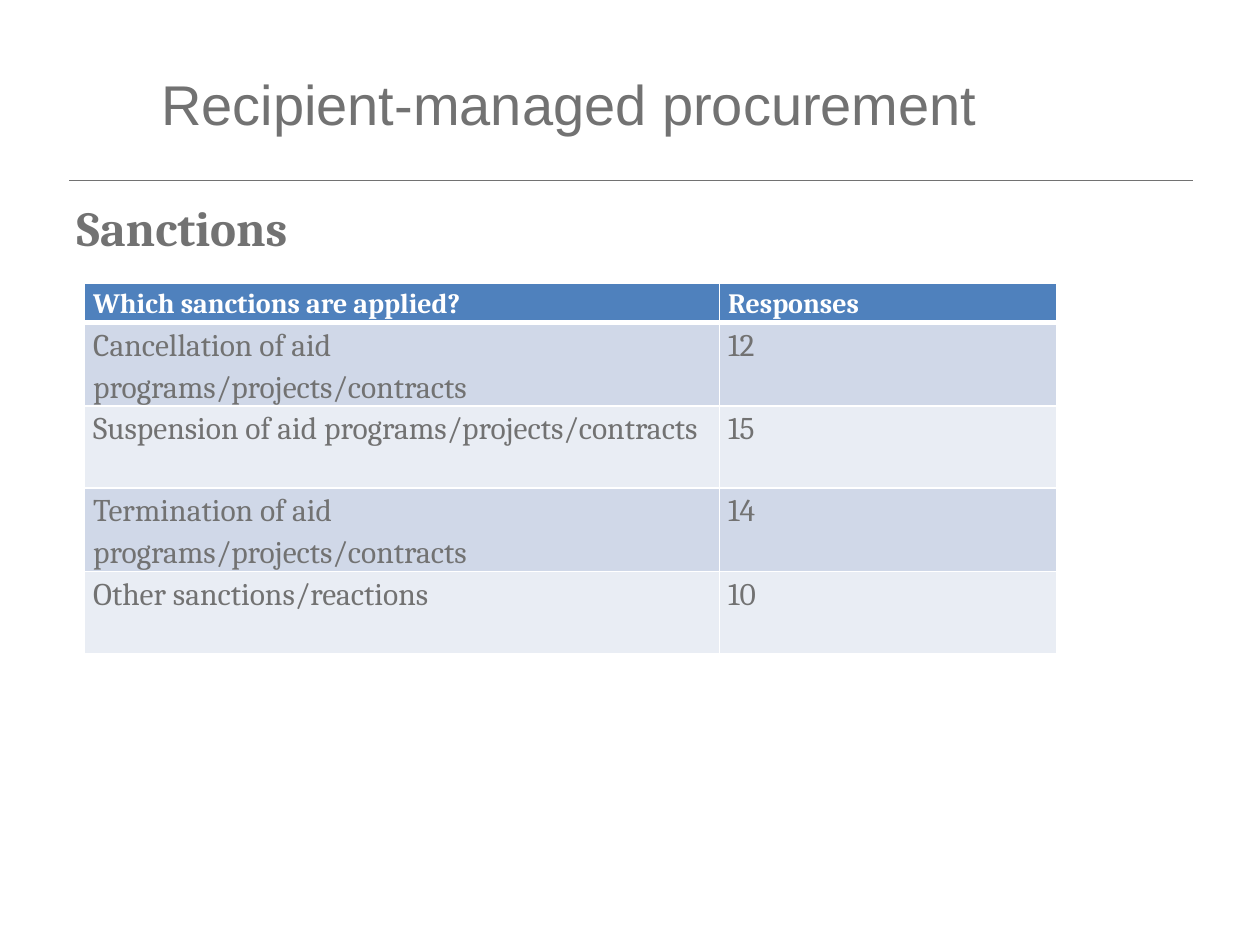
import pptx
import pptx.dml.color
import pptx.enum.shapes
import pptx.enum.text
import pptx.oxml
import pptx.oxml.ns
import pptx.util
from dataclasses import dataclass

Inches = pptx.util.Inches
Pt = pptx.util.Pt


@dataclass(frozen=True)
class Theme:
    grey: str = "727272"
    white: str = "FFFFFF"
    header_fill: str = "4F81BD"
    band_fills: tuple = ("D0D8E8", "E9EDF4")
    title_font: str = "Arial"
    body_font: str = "Cambria"
    title_size: int = 32
    subtitle_size: int = 28
    header_size: int = 16
    body_size: int = 18


def rgb(value):
    return pptx.dml.color.RGBColor.from_string(value)


class PageBuilder:
    def __init__(self, page, theme):
        self.page = page
        self.theme = theme

    def style(self, para, font, size, color, bold=False):
        for span in para.runs:
            span.font.name = font
            span.font.size = Pt(size)
            span.font.color.rgb = rgb(color)
            span.font.bold = bold

    def text(self, words, left, top, width, height, font, size, bold=False, wrap=True):
        box = self.page.shapes.add_textbox(
            Inches(left), Inches(top), Inches(width), Inches(height))
        frame = box.text_frame
        frame.text = words
        frame.word_wrap = wrap
        frame.vertical_anchor = pptx.enum.text.MSO_ANCHOR.MIDDLE
        self.style(frame.paragraphs[0], font, size, self.theme.grey, bold)

    def rule(self, left, top, width):
        line = self.page.shapes.add_connector(
            pptx.enum.shapes.MSO_CONNECTOR.STRAIGHT,
            Inches(left), Inches(top), Inches(left + width), Inches(top))
        line.line.color.rgb = rgb(self.theme.grey)
        line.line.width = Pt(0.5)
        line._element.spPr.append(pptx.oxml.parse_xml(
            f'<a:effectLst {pptx.oxml.ns.nsdecls("a")}/>'))

    def borders(self, cell, bottom_width):
        properties = cell._tc.get_or_add_tcPr()
        widths = {"lnL": 1, "lnR": 1, "lnT": 1, "lnB": bottom_width}
        # Borders come before the fill in the cell properties
        for index, (side, width) in enumerate(widths.items()):
            properties.insert(index, pptx.oxml.parse_xml(
                f'<a:{side} {pptx.oxml.ns.nsdecls("a")} w="{Pt(width)}"><a:solidFill>'
                f'<a:srgbClr val="{self.theme.white}"/></a:solidFill></a:{side}>'))

    def cell(self, cell, words, row):
        theme = self.theme
        header = row == 0
        cell.text = words
        cell.margin_left = cell.margin_right = Inches(0.07)
        cell.margin_top = cell.margin_bottom = 0
        cell.fill.solid()
        cell.fill.fore_color.rgb = rgb(
            theme.header_fill if header else theme.band_fills[(row - 1) % 2])
        para = cell.text_frame.paragraphs[0]
        para.line_spacing = 1.15
        self.style(para, theme.body_font,
                   theme.header_size if header else theme.body_size,
                   theme.white if header else theme.grey, header)
        self.borders(cell, 3 if header else 1)

    def table(self, rows, left, top, widths, heights):
        table = self.page.shapes.add_table(
            len(rows), len(widths), Inches(left), Inches(top),
            Inches(sum(widths)), Inches(sum(heights))).table
        for column, width in zip(table.columns, widths):
            column.width = Inches(width)
        for row, (values, height) in enumerate(zip(rows, heights)):
            table.rows[row].height = Inches(height)
            for column, words in enumerate(values):
                self.cell(table.cell(row, column), words, row)


def main():
    deck = pptx.Presentation()
    deck.slide_width, deck.slide_height = Inches(10), Inches(7.5)
    theme = Theme()
    builder = PageBuilder(deck.slides.add_slide(deck.slide_layouts[6]), theme)

    # Rule under the title
    builder.rule(0.55, 1.43, 8.92)

    # Sanctions table
    responses = [
        ("Which sanctions are applied?", "Responses"),
        ("Cancellation of aid programs/projects/contracts", "12"),
        ("Suspension of aid programs/projects/contracts", "15"),
        ("Termination of aid programs/projects/contracts", "14"),
        ("Other sanctions/reactions", "10"),
    ]
    builder.table(responses, 0.67, 2.25, [5.04, 2.68], [0.31] + [0.65] * 4)

    # Title and subtitle
    builder.text("Recipient-managed procurement", 1.18, 0.26, 8.11, 1.12,
                 theme.title_font, theme.title_size)
    builder.text("Sanctions", 0.51, 1.52, 2.19, 0.57,
                 theme.body_font, theme.subtitle_size, bold=True, wrap=False)

    deck.save("out.pptx")


if __name__ == "__main__":
    main()
